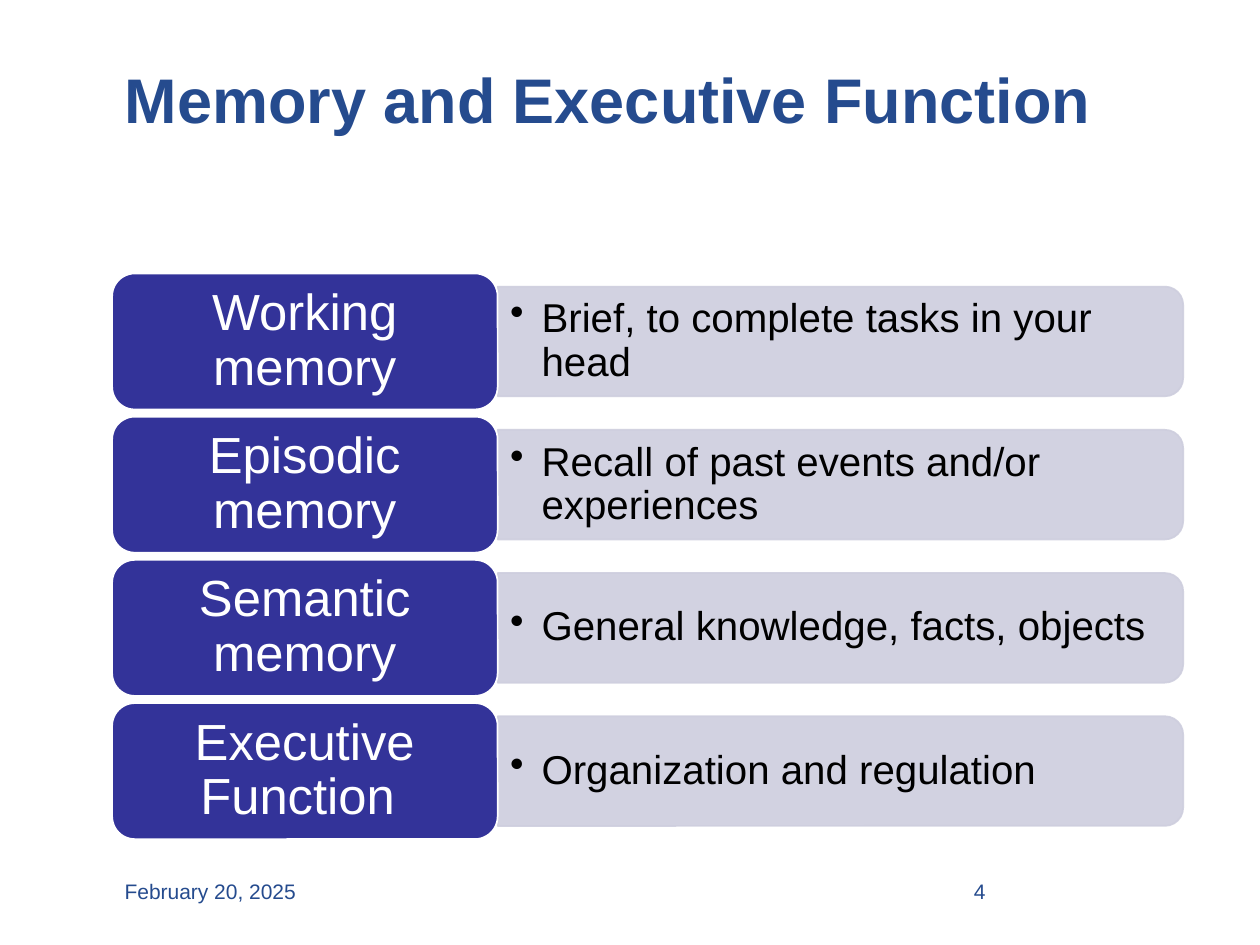
from lxml import etree
from pptx import Presentation
from pptx import util as u
from pptx.dml.color import RGBColor
from pptx.enum import shapes, text
from pptx.oxml.ns import qn

NAVY = "254B8E"
INDIGO = "333399"
LILAC = "CECEDE"
WHITE = "FFFFFF"
BLACK = "000000"
ROWS = [
    ("Working memory", "Brief, to complete tasks in your head"),
    ("Episodic memory", "Recall of past events and/or experiences"),
    ("Semantic memory", "General knowledge, facts, objects"),
    ("Executive Function ", "Organization and regulation"),
]
LEFT, TOP, PITCH = 0.89, 2.17, 3.41 / 3
CARD_W, CARD_H = 3.06, 1.08
BAR_W, BAR_H = 5.44, 0.87


def color(code):
    return RGBColor.from_string(code)


def inches(*sizes):
    return [u.Inches(size) for size in sizes]


def write(shape, words, size, ink, bold=False, align=text.PP_ALIGN.LEFT,
          anchor=text.MSO_ANCHOR.TOP, pad=(0.1, 0.05), lead=None, after=0,
          bullet=False):
    frame = shape.text_frame
    frame.word_wrap = True
    frame.auto_size = text.MSO_AUTO_SIZE.NONE
    frame.vertical_anchor = anchor
    frame.margin_left = frame.margin_right = u.Inches(pad[0])
    frame.margin_top = frame.margin_bottom = u.Inches(pad[1])
    para = frame.paragraphs[0]
    para.alignment = align
    para.line_spacing = lead
    para.space_after = u.Pt(after)
    if bullet:
        props = para._p.get_or_add_pPr()
        props.set("marL", str(u.Inches(0.25)))
        props.set("indent", str(u.Inches(-0.25)))
        etree.SubElement(props, qn("a:buChar")).set("char", "•")
    run = para.add_run()
    run.text = words
    font = run.font
    font.name = "Arial"
    font.size = u.Pt(size)
    font.bold = bold
    font.color.rgb = color(ink)


def label(slide, place, words, size, ink, **style):
    box = slide.shapes.add_textbox(*inches(*place))
    write(box, words, size, ink, **style)


def block(slide, kind, place, fill, line):
    shape = slide.shapes.add_shape(kind, *inches(*place))
    shape.shadow.inherit = False
    shape.fill.solid()
    shape.fill.fore_color.rgb = color(fill)
    shape.line.color.rgb = color(line)
    shape.line.width = u.Pt(1)
    return shape


def fade(shape, share):
    for tint in shape._element.spPr.iter(qn("a:srgbClr")):
        etree.SubElement(tint, qn("a:alpha")).set("val", str(share * 1000))


def row(slide, top, name, note):
    mid = top + CARD_H / 2
    edge = LEFT + CARD_W
    bar = block(slide, shapes.MSO_SHAPE.ROUND_2_SAME_RECTANGLE,
                (edge + (BAR_W - BAR_H) / 2, mid - BAR_W / 2, BAR_H, BAR_W),
                LILAC, LILAC)
    bar.rotation = 90
    fade(bar, 90)
    label(slide, (edge, mid - 0.39, 5.4, 0.78), note, 23, BLACK,
          anchor=text.MSO_ANCHOR.MIDDLE, lead=0.9, bullet=True)
    card = block(slide, shapes.MSO_SHAPE.ROUNDED_RECTANGLE,
                 (LEFT, top, CARD_W, CARD_H), INDIGO, WHITE)
    write(card, name, 29, WHITE, align=text.PP_ALIGN.CENTER,
          anchor=text.MSO_ANCHOR.MIDDLE, pad=(0.12, 0.06), lead=0.9)


def main():
    deck = Presentation()
    deck.slide_width, deck.slide_height = inches(10, 7.5)
    slide = deck.slides.add_slide(deck.slide_layouts[5])
    title = slide.shapes.title
    title.left, title.top, title.width, title.height = inches(LEFT, 0.43, 8.5, 1.25)
    write(title, "Memory and Executive Function", 36, NAVY, bold=True)
    label(slide, (LEFT, 6.92, 2.08, 0.33), "February 20, 2025", 12, NAVY, after=6)
    label(slide, (6.75, 6.92, 1.17, 0.33), "4", 12, NAVY,
          align=text.PP_ALIGN.RIGHT, after=6)
    for i, (name, note) in enumerate(ROWS):
        row(slide, TOP + i * PITCH, name, note)
    deck.save("out.pptx")


if __name__ == "__main__":
    main()
